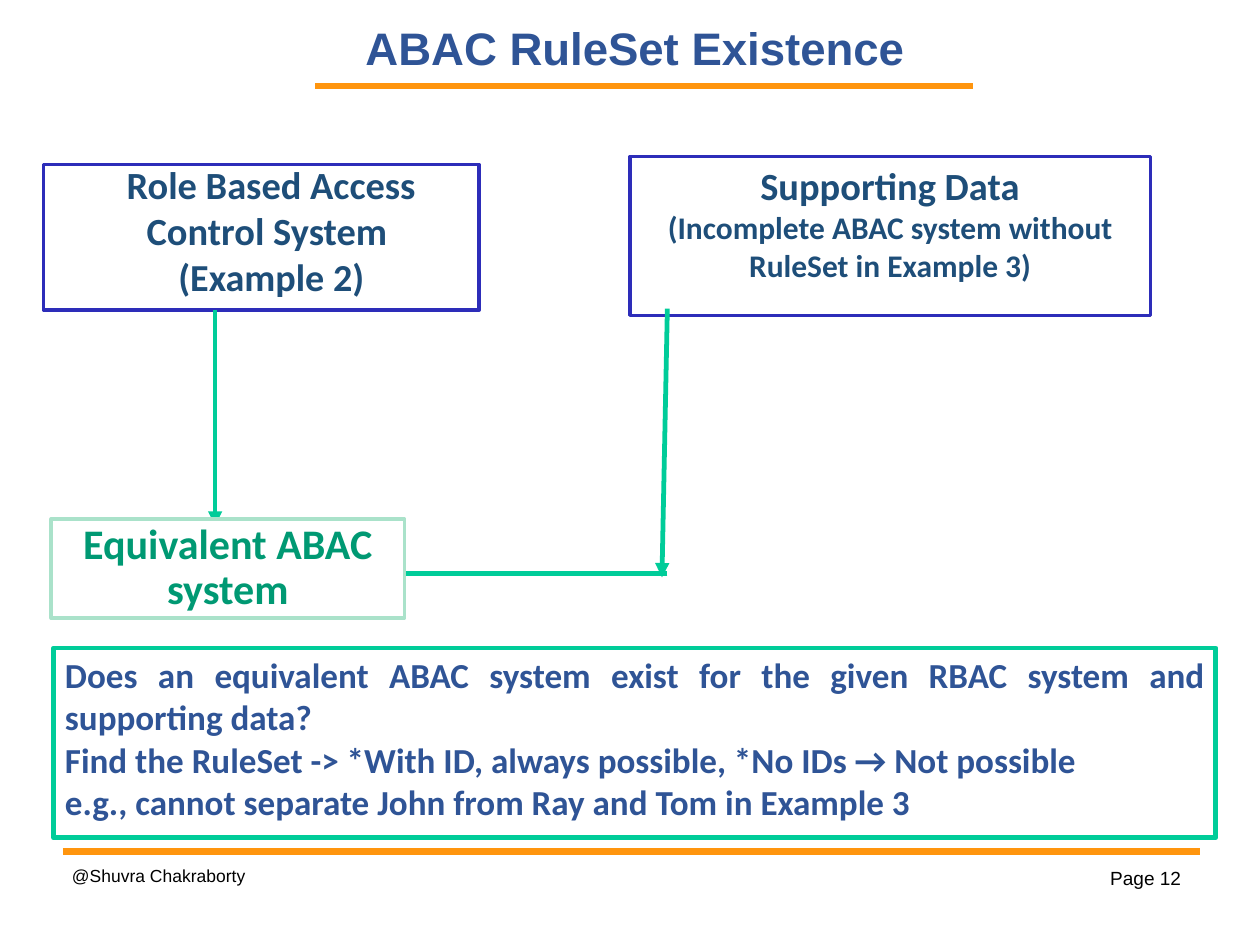
from dataclasses import dataclass
from typing import Optional

from lxml import etree
from pptx import Presentation
from pptx.dml.color import RGBColor
from pptx.enum.shapes import MSO_CONNECTOR, MSO_SHAPE
from pptx.enum.text import MSO_ANCHOR, MSO_AUTO_SIZE, PP_ALIGN
from pptx.oxml.ns import qn
from pptx.util import Cm, Pt

STRAIGHT = MSO_CONNECTOR.STRAIGHT
RECTANGLE = MSO_SHAPE.RECTANGLE
TOP, MIDDLE, BOTTOM = MSO_ANCHOR.TOP, MSO_ANCHOR.MIDDLE, MSO_ANCHOR.BOTTOM
LEFT, CENTER, RIGHT, JUSTIFY = (
    PP_ALIGN.LEFT, PP_ALIGN.CENTER, PP_ALIGN.RIGHT, PP_ALIGN.JUSTIFY)

COLORS = {
    "orange": "FF950E", "blue": "2F5496", "navy": "1E4E79", "frame": "2D2DB9",
    "green": "00CC99", "dark green": "009973", "pale green": "AAE2CA",
    "white": "FFFFFF", "black": "000000",
}


@dataclass
class Line:
    text: str
    size: float
    color: str
    align: PP_ALIGN = CENTER
    font: str = "Calibri"
    bold: bool = True
    spacing: float = 1.0


@dataclass
class Block:
    """Text area in centimetres, outlined when a border colour is given."""
    left: float
    top: float
    width: float
    height: float
    lines: tuple[Line, ...] = ()
    anchor: MSO_ANCHOR = TOP
    border: Optional[str] = None
    border_width: float = 2.25


@dataclass
class Stroke:
    start: tuple[float, float]
    end: tuple[float, float]
    color: str = "green"
    width: float = 3
    arrow: bool = True


def rgb(name: str) -> RGBColor:
    return RGBColor.from_string(COLORS[name])


def write_lines(shape, block: Block) -> None:
    frame = shape.text_frame
    frame.word_wrap = True
    frame.auto_size = MSO_AUTO_SIZE.NONE
    frame.vertical_anchor = block.anchor
    for index, line in enumerate(block.lines):
        paragraph = frame.paragraphs[0] if index == 0 else frame.add_paragraph()
        properties = paragraph._p.get_or_add_pPr()
        properties.set("marL", "0")
        properties.set("indent", "0")
        etree.SubElement(properties, qn("a:buNone"))
        paragraph.alignment = line.align
        paragraph.line_spacing = line.spacing
        paragraph.space_before = Pt(0)
        run = paragraph.add_run()
        run.text = line.text
        run.font.name = line.font
        run.font.size = Pt(line.size)
        run.font.bold = line.bold
        run.font.color.rgb = rgb(line.color)


def outline(shape, block: Block) -> None:
    shape.line.color.rgb = rgb(block.border)
    shape.line.width = Pt(block.border_width)


def fill_placeholder(placeholder, block: Block) -> None:
    placeholder.left, placeholder.top = Cm(block.left), Cm(block.top)
    placeholder.width, placeholder.height = Cm(block.width), Cm(block.height)
    if block.border:
        outline(placeholder, block)
    write_lines(placeholder, block)


def draw_block(slide, block: Block) -> None:
    place = [Cm(v) for v in (block.left, block.top, block.width, block.height)]
    if block.border:
        shape = slide.shapes.add_shape(RECTANGLE, *place)
        shape.shadow.inherit = False
        shape.fill.solid()
        shape.fill.fore_color.rgb = rgb("white")
        outline(shape, block)
    else:
        shape = slide.shapes.add_textbox(*place)
    if block.lines:
        write_lines(shape, block)


def draw_stroke(slide, stroke: Stroke) -> None:
    ends = [Cm(v) for v in (*stroke.start, *stroke.end)]
    connector = slide.shapes.add_connector(STRAIGHT, *ends)
    connector.line.color.rgb = rgb(stroke.color)
    connector.line.width = Pt(stroke.width)
    if stroke.arrow:
        etree.SubElement(connector.line._get_or_add_ln(), qn("a:tailEnd"),
                         type="triangle")
    etree.SubElement(connector._element.spPr, qn("a:effectLst"))


TITLE = Block(6.25, 0.08, 15.72, 1.73, (
    Line("ABAC RuleSet Existence", 28.7, "blue", font="Arial", spacing=0.9),
), BOTTOM)

QUESTION = Block(1.19, 14.4, 25.83, 4.22, (
    Line("Does an equivalent ABAC system exist for the given RBAC system "
         "and supporting data?", 22.1, "blue", JUSTIFY),
    Line("Find the RuleSet -> *With ID, always possible, "
         "*No IDs → Not possible", 22.1, "blue", JUSTIFY),
    Line("e.g., cannot separate John from Ray and Tom in Example 3",
         22.1, "blue", LEFT),
), border="green", border_width=3)

RBAC_FRAME = Block(0.97, 3.66, 9.68, 3.23, border="frame")
RBAC_LABEL = Block(1.42, 3.45, 9.22, 2.36, (
    Line("Role Based Access Control System ", 24.2, "navy"),
    Line("(Example 2)", 24, "navy"),
))
SUPPORTING_DATA = Block(14, 3.48, 11.56, 3.53, (
    Line("Supporting Data", 24.2, "navy"),
    Line("(Incomplete ABAC system without RuleSet in Example 3)", 19.8, "navy"),
), border="frame", border_width=2)
EQUIVALENT_ABAC = Block(1.14, 11.53, 7.85, 2.21, (
    Line("Equivalent ABAC system", 26.5, "dark green", spacing=0.9),
), MIDDLE, "pale green")
AUTHOR = Block(1.35, 18.95, 7.7, 1.02, (
    Line("@Shuvra Chakraborty", 11, "black", LEFT, "Arial", False),
), MIDDLE)
PAGE = Block(22.89, 19.13, 3.61, 0.76, (
    Line("Page 12", 12, "black", RIGHT, "Arial", False),
))

TITLE_RULE = Stroke((7.01, 1.91), (21.62, 1.91), "orange", 4.31, False)
FOOTER_RULE = Stroke((1.4, 18.92), (26.67, 18.92), "orange", 4.31, False)
RBAC_TO_ABAC = Stroke((4.78, 6.88), (4.78, 11.68))
JUNCTION_TO_ABAC = Stroke((14.83, 12.75), (8.56, 12.75))
DATA_TO_JUNCTION = Stroke((14.83, 6.86), (14.71, 12.83))

BACK_TO_FRONT = (
    TITLE_RULE, FOOTER_RULE, PAGE, RBAC_FRAME, RBAC_LABEL, SUPPORTING_DATA,
    RBAC_TO_ABAC, JUNCTION_TO_ABAC, EQUIVALENT_ABAC, DATA_TO_JUNCTION, AUTHOR,
)


def main() -> None:
    deck = Presentation()
    deck.slide_width, deck.slide_height = Cm(28), Cm(21)
    slide = deck.slides.add_slide(deck.slide_layouts[1])
    fill_placeholder(slide.shapes.title, TITLE)
    fill_placeholder(slide.placeholders[1], QUESTION)
    for element in BACK_TO_FRONT:
        if isinstance(element, Stroke):
            draw_stroke(slide, element)
        else:
            draw_block(slide, element)
    deck.save("out.pptx")


if __name__ == "__main__":
    main()
